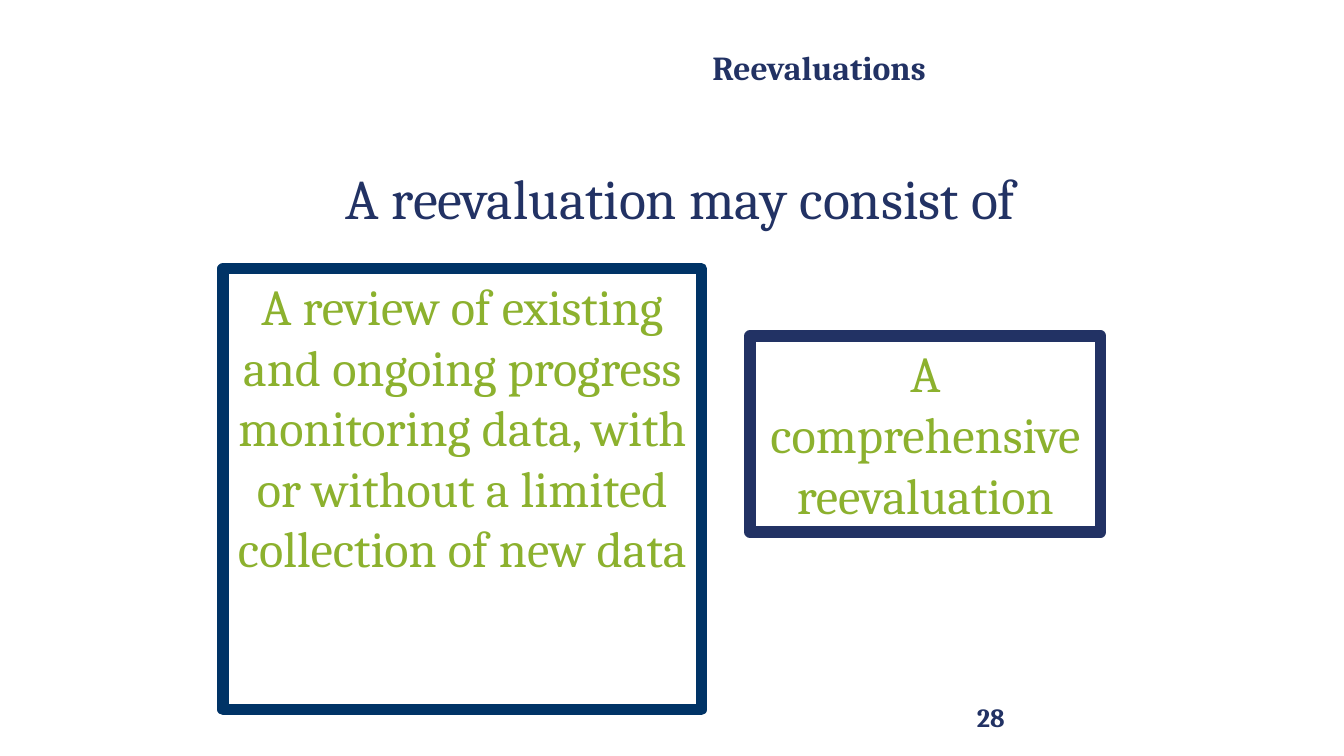
from pptx import Presentation
from pptx.dml.color import RGBColor
from pptx.enum.shapes import MSO_SHAPE
from pptx.enum.text import MSO_ANCHOR, PP_ALIGN
from pptx.util import Inches, Pt

RECT = MSO_SHAPE.RECTANGLE
TOP, MIDDLE = MSO_ANCHOR.TOP, MSO_ANCHOR.MIDDLE
LEFT, CENTER = PP_ALIGN.LEFT, PP_ALIGN.CENTER

FONT = "Cambria"
COLORS = {"navy": "223264", "blue": "003366", "green": "8CB12E"}


def rgb(name):
    return RGBColor.from_string(COLORS[name])


def write(sp, text, size, color, bold=False, align=CENTER, anchor=TOP,
          margins=(0.1, 0.05)):
    """Fill a shape's text frame with one formatted paragraph."""
    tf = sp.text_frame
    tf.word_wrap = True
    tf.vertical_anchor = anchor
    tf.margin_left = tf.margin_right = Inches(margins[0])
    tf.margin_top = tf.margin_bottom = Inches(margins[1])
    p = tf.paragraphs[0]
    p.alignment = align
    r = p.add_run()
    r.text = text
    r.font.name = FONT
    r.font.size = Pt(size)
    r.font.bold = bold
    r.font.color.rgb = rgb(color)
    return p


def add_title(s, text, x, y, w, h):
    sp = s.shapes.title
    sp.left, sp.top, sp.width, sp.height = map(Inches, (x, y, w, h))
    p = write(sp, text, 18, "navy", bold=True, anchor=MIDDLE,
              margins=(0.07, 0.04))
    p.line_spacing = 1.15
    p.space_before = Pt(0)
    p.space_after = Pt(16)


def add_text(s, text, x, y, w, h, size, **style):
    sp = s.shapes.add_textbox(*map(Inches, (x, y, w, h)))
    write(sp, text, size, "navy", **style)


def add_option(s, text, x, y, w, h, border):
    sp = s.shapes.add_shape(RECT, *map(Inches, (x, y, w, h)))
    sp.shadow.inherit = False
    sp.fill.background()
    sp.line.color.rgb = rgb(border)
    sp.line.width = Pt(6)
    write(sp, text, 27, "green")


def main():
    # Widescreen 16:9 slide
    prs = Presentation()
    prs.slide_width = Inches(10)
    prs.slide_height = Inches(10 * 9 / 16)
    s = prs.slides.add_slide(prs.slide_layouts[5])

    # Title and slide number
    add_title(s, "Reevaluations", 3.44, 0.04, 5.31, 0.88)
    add_text(s, "28", 7.17, 5.13, 2.33, 0.41, 14, bold=True, align=LEFT,
             anchor=MIDDLE, margins=(0.1, 0.1))

    # The two forms a reevaluation can take
    add_option(s, "A review of existing and ongoing progress monitoring data, "
               "with or without a limited collection of new data",
               1.66, 2, 3.56, 3.28, "blue")
    add_option(s, "A comprehensive reevaluation", 5.58, 2.5, 2.61, 1.46, "navy")

    # Lead-in
    add_text(s, "A reevaluation may consist of", 1.94, 1.17, 6.25, 0.61, 30)

    prs.save("out.pptx")


if __name__ == "__main__":
    main()
